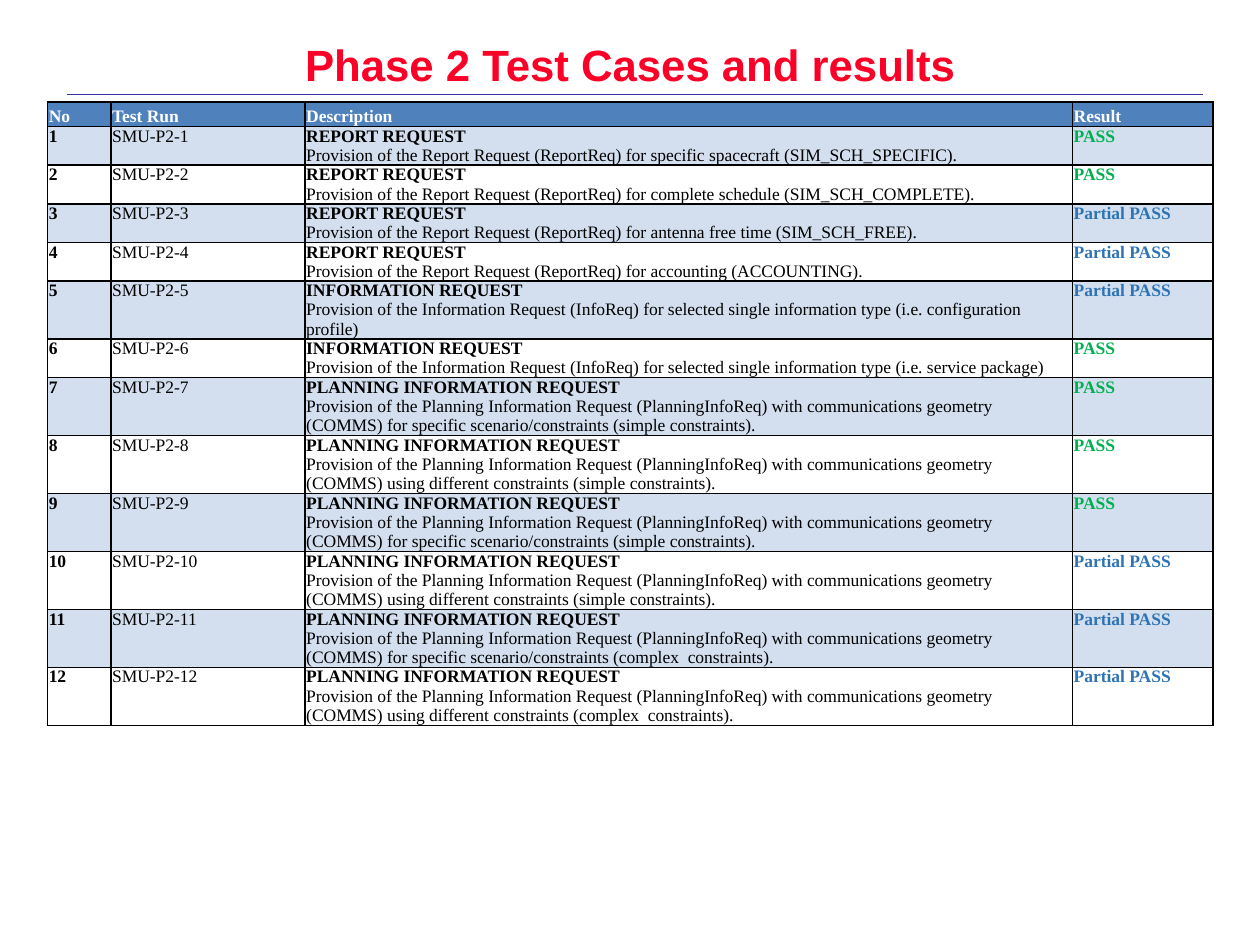
from lxml.etree import SubElement
from pptx import Presentation
from pptx.dml.color import RGBColor
from pptx.enum.shapes import MSO_CONNECTOR
from pptx.enum.text import MSO_ANCHOR, MSO_AUTO_SIZE, PP_ALIGN
from pptx.oxml.ns import qn
from pptx.util import Pt

RED = RGBColor(0xFC, 0x01, 0x28)
NAVY = RGBColor(0x33, 0x33, 0x99)
WHITE = RGBColor(0xFF, 0xFF, 0xFF)
BLACK = RGBColor(0x00, 0x00, 0x00)
HEADER_BLUE = RGBColor(0x4F, 0x81, 0xBD)
BAND_BLUE = RGBColor(0xD3, 0xDF, 0xEE)
RESULT_COLORS = {
    "PASS": RGBColor(0x00, 0xB0, 0x50),
    "Partial PASS": RGBColor(0x2E, 0x74, 0xB5),
}

HEADERS = ["No", "Test Run", "Description", "Result"]
COLUMN_WIDTHS = [36.2, 110.9, 438.6, 80.2]
HEADER_HEIGHT, LINE_HEIGHT = 14, 11
FONT_SIZE = 10

REPORT = ("REPORT REQUEST", "Provision of the Report Request (ReportReq) for ", 2)
INFO = ("INFORMATION REQUEST",
        "Provision of the Information Request (InfoReq) for selected single information type ", 2)
PLANNING = ("PLANNING INFORMATION REQUEST",
            "Provision of the Planning Information Request (PlanningInfoReq) "
            "with communications geometry (COMMS) ", 3)

# Request kind, end of its description, result
TEST_CASES = [
    (REPORT, "specific spacecraft (SIM_SCH_SPECIFIC).", "PASS"),
    (REPORT, "complete schedule (SIM_SCH_COMPLETE).", "PASS"),
    (REPORT, "antenna free time (SIM_SCH_FREE).", "Partial PASS"),
    (REPORT, "accounting (ACCOUNTING).", "Partial PASS"),
    (INFO, "(i.e. configuration profile)", "Partial PASS"),
    (INFO, "(i.e. service package)", "PASS"),
    (PLANNING, "for specific scenario/constraints (simple constraints).", "PASS"),
    (PLANNING, "using different constraints (simple constraints).", "PASS"),
    (PLANNING, "for specific scenario/constraints (simple constraints).", "PASS"),
    (PLANNING, "using different constraints (simple constraints).", "Partial PASS"),
    (PLANNING, "for specific scenario/constraints (complex  constraints).", "Partial PASS"),
    (PLANNING, "using different constraints (complex  constraints).", "Partial PASS"),
]


def set_attrs(obj, values):
    for name, value in values.items():
        setattr(obj, name, value)


def add_run(p, text, color, **font):
    r = p.add_run()
    r.text = text
    set_attrs(r.font, {"name": "Times New Roman", "size": Pt(FONT_SIZE), **font})
    r.font.color.rgb = color


def add_break(p):
    """Add a line break as tall as the text around it."""
    p.add_line_break()
    br = p._p.findall(qn("a:br"))[-1]
    SubElement(br, qn("a:rPr"), sz=str(FONT_SIZE * 100))


def add_borders(cell):
    tc_pr = cell._tc.get_or_add_tcPr()
    for side in ("a:lnL", "a:lnR", "a:lnT", "a:lnB"):
        ln = SubElement(tc_pr, qn(side), w=str(Pt(1)))
        fill = SubElement(ln, qn("a:solidFill"))
        SubElement(fill, qn("a:srgbClr"), val=str(BLACK))


def format_cell(cell, fill, align):
    """Style the cell and return its paragraph."""
    set_attrs(cell, {"margin_left": Pt(0.7), "margin_right": Pt(0.7),
                     "margin_top": 0, "margin_bottom": 0,
                     "vertical_anchor": MSO_ANCHOR.TOP})
    add_borders(cell)
    if fill is None:
        cell.fill.background()
    else:
        cell.fill.solid()
        cell.fill.fore_color.rgb = fill
    p = cell.text_frame.paragraphs[0]
    p.alignment = align
    return p


def add_title(s, text):
    sp = s.shapes.title
    set_attrs(sp, {"left": Pt(36), "top": Pt(21.6), "width": Pt(648), "height": Pt(57.6)})
    tf = sp.text_frame
    set_attrs(tf, {"word_wrap": True, "auto_size": MSO_AUTO_SIZE.NONE,
                   "vertical_anchor": MSO_ANCHOR.TOP})
    p = tf.paragraphs[0]
    set_attrs(p, {"alignment": PP_ALIGN.CENTER, "line_spacing": 0.9})
    add_run(p, text, RED, name="Arial", size=Pt(25), bold=True)


def add_rule(s):
    line = s.shapes.add_connector(MSO_CONNECTOR.STRAIGHT, Pt(38.2), Pt(54), Pt(687.6), Pt(54))
    line.line.color.rgb = NAVY
    line.line.width = Pt(0.13)
    SubElement(line._element.spPr, qn("a:effectLst"))


def add_results_table(s):
    heights = [HEADER_HEIGHT] + [kind[2] * LINE_HEIGHT for kind, _, _ in TEST_CASES]
    table = s.shapes.add_table(len(heights), len(HEADERS), Pt(27.2), Pt(58.3),
                               Pt(sum(COLUMN_WIDTHS)), Pt(sum(heights))).table
    for column, width in zip(table.columns, COLUMN_WIDTHS):
        column.width = Pt(width)
    for row, height in zip(table.rows, heights):
        row.height = Pt(height)

    aligns = [PP_ALIGN.JUSTIFY, PP_ALIGN.JUSTIFY, PP_ALIGN.LEFT, PP_ALIGN.JUSTIFY]
    for cell, text, align in zip(table.rows[0].cells, HEADERS, aligns):
        p = format_cell(cell, HEADER_BLUE, align)
        p.line_spacing = Pt(HEADER_HEIGHT)
        add_run(p, text, WHITE, bold=True)

    for n, ((heading, opening, _), ending, result) in enumerate(TEST_CASES, 1):
        fill = BAND_BLUE if n % 2 else None
        number, test_run, description, outcome = [
            format_cell(cell, fill, align)
            for cell, align in zip(table.rows[n].cells, aligns)]
        add_run(number, str(n), BLACK, bold=True)
        add_run(test_run, f"SMU-P2-{n}", BLACK, bold=False)
        add_run(description, heading, BLACK, bold=True)
        add_break(description)
        add_run(description, opening + ending, BLACK, bold=False)
        add_run(outcome, result, RESULT_COLORS[result], bold=True)


def main():
    prs = Presentation()
    set_attrs(prs, {"slide_width": Pt(720), "slide_height": Pt(540)})
    s = prs.slides.add_slide(prs.slide_layouts[5])
    add_rule(s)
    add_title(s, "Phase 2 Test Cases and results")
    add_results_table(s)
    prs.save("out.pptx")


if __name__ == "__main__":
    main()
